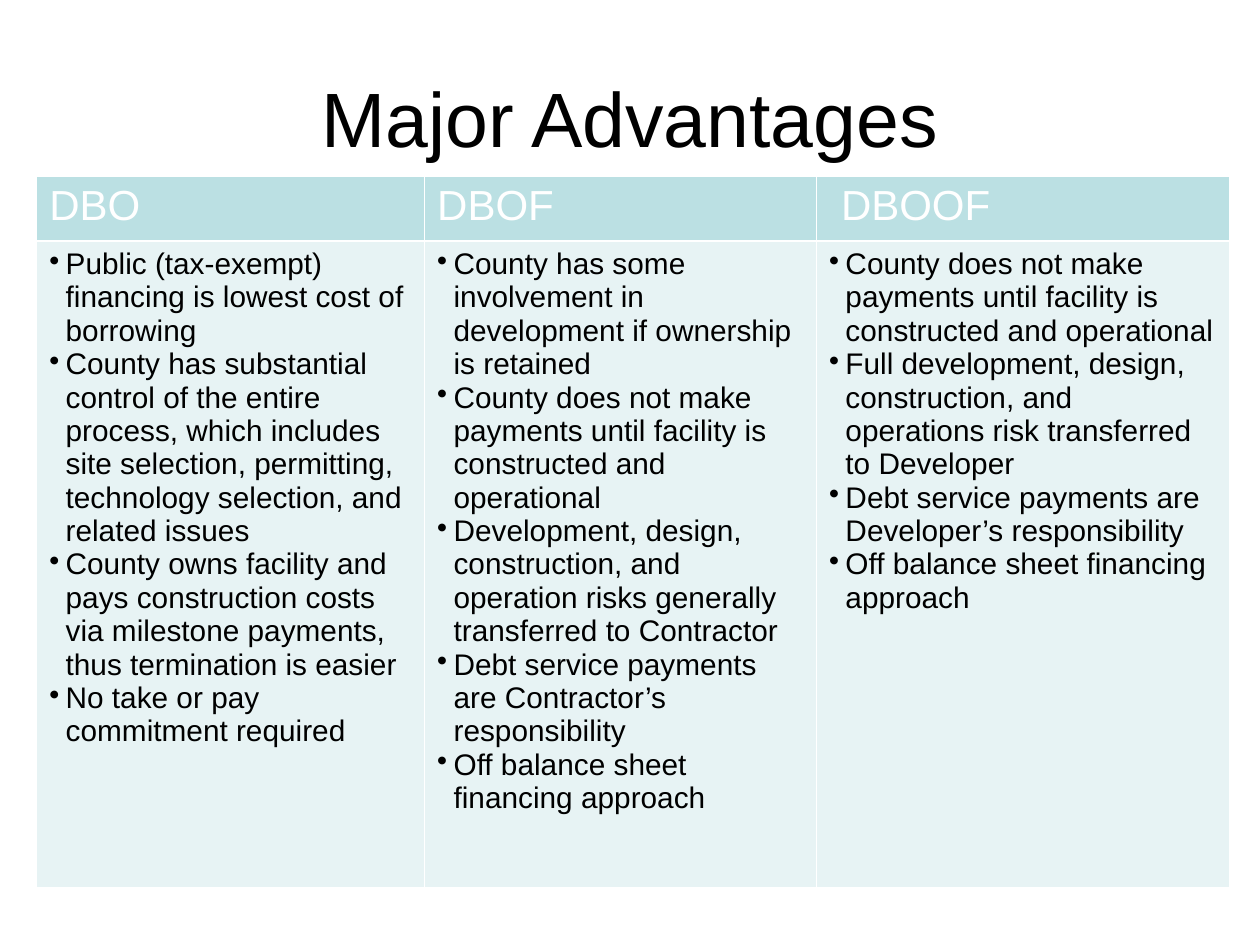
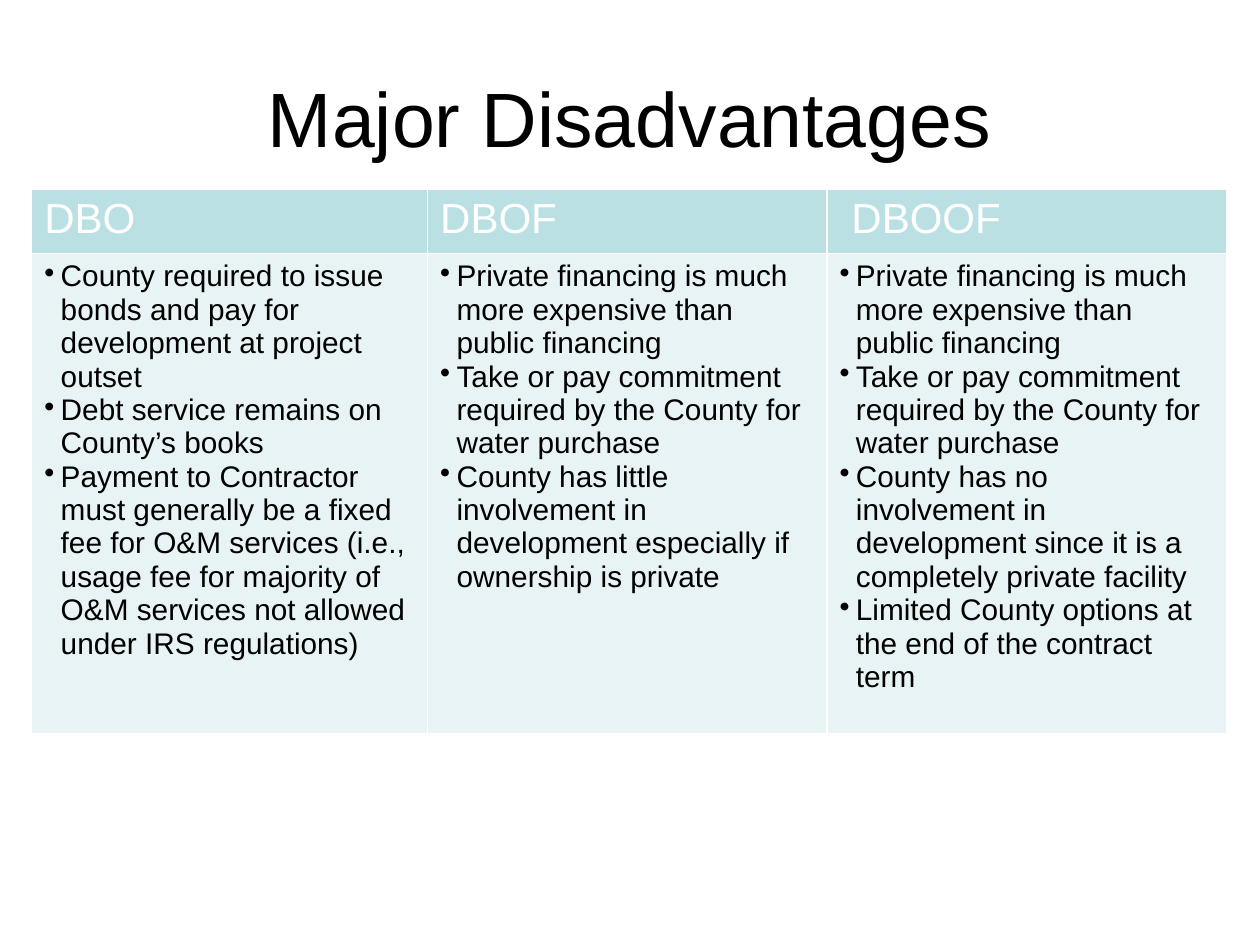
from dataclasses import dataclass

from lxml.etree import SubElement
from pptx import Presentation
from pptx.dml.color import RGBColor
from pptx.enum.text import MSO_ANCHOR, PP_ALIGN
from pptx.oxml import parse_xml
from pptx.oxml.ns import nsdecls, qn
from pptx.util import Cm, Pt


@dataclass(frozen=True)
class Theme:
    font: str = "Arial"
    ink: str = "000000"
    paper: str = "FFFFFF"
    head: str = "BBE0E3"
    body: str = "E7F3F4"
    title_size: int = 44
    head_size: int = 24
    body_size: int = 17
    rule: int = 1


HEADS = ["DBO", "DBOF", "DBOOF"]
HEAD_H = 1.3
HANG = 0.33
LAST_INSET = 0.24

GAINS = [
    [
        "Public (tax-exempt) financing is lowest cost of borrowing",
        "County has substantial control of the entire process, which includes site "
        "selection, permitting, technology selection, and related issues",
        "County owns facility and pays construction costs via milestone payments, "
        "thus termination is easier",
        "No take or pay commitment required",
    ],
    [
        "County has some involvement in development if ownership is retained",
        "County does not make payments until facility is constructed and operational",
        "Development, design, construction, and operation risks generally transferred "
        "to Contractor",
        "Debt service payments are Contractor’s responsibility",
        "Off balance sheet financing approach",
    ],
    [
        "County does not make payments until facility is constructed and operational",
        "Full development, design, construction, and operations risk transferred to "
        "Developer",
        "Debt service payments are Developer’s responsibility",
        "Off balance sheet financing approach",
    ],
]

PRIVATE = [
    "Private financing is much more expensive than public financing",
    "Take or pay commitment required by the County for water purchase",
]
LOSSES = [
    [
        "County required to issue bonds and pay for development at project outset",
        "Debt service remains on County’s books",
        "Payment to Contractor must generally be a fixed fee for O&M services (i.e., "
        "usage fee for majority of O&M services not allowed under IRS regulations)",
    ],
    PRIVATE + [
        "County has little involvement in development especially if ownership is private",
    ],
    PRIVATE + [
        "County has no involvement in development since it is a completely private "
        "facility",
        "Limited County options at the end of the contract term",
    ],
]


class Deck:
    def __init__(self, theme):
        self.theme = theme
        self.show = Presentation()
        self.show.slide_width, self.show.slide_height = Cm(25.4), Cm(19.05)
        self.slide = None

    def add(self):
        self.slide = self.show.slides.add_slide(self.show.slide_layouts[6])
        fill = self.slide.background.fill
        fill.solid()
        fill.fore_color.rgb = RGBColor.from_string(self.theme.paper)

    def put(self, frame, lines, size, color, align=PP_ALIGN.LEFT, inset=0, bullet=False):
        """Fill a text frame with one paragraph per line; inset is in cm."""
        frame.word_wrap = True
        for i, line in enumerate(lines):
            para = frame.paragraphs[0] if i == 0 else frame.add_paragraph()
            para.alignment = align
            props = para._p.get_or_add_pPr()
            props.set("marL", str(Cm(inset)))
            props.set("indent", str(-Cm(inset) if bullet else 0))
            if bullet:
                SubElement(props, qn("a:buChar")).set("char", "•")
            run = para.add_run()
            run.text = line
            run.font.name = self.theme.font
            run.font.size = Pt(size)
            run.font.bold = False
            run.font.color.rgb = RGBColor.from_string(color)

    def title(self, text):
        box = self.slide.shapes.add_textbox(Cm(1.27), Cm(0.76), Cm(22.86), Cm(3.18))
        box.text_frame.vertical_anchor = MSO_ANCHOR.MIDDLE
        self.put(box.text_frame, [text], self.theme.title_size, self.theme.ink,
                 align=PP_ALIGN.CENTER)

    def paint(self, cell, color):
        """Give a cell its fill and its four borders."""
        cell.fill.solid()
        cell.fill.fore_color.rgb = RGBColor.from_string(color)
        props = cell._tc.get_or_add_tcPr()
        for i, side in enumerate("LRTB"):
            props.insert(i, parse_xml(
                f'<a:ln{side} {nsdecls("a")} w="{Pt(self.theme.rule)}"><a:solidFill>'
                f'<a:srgbClr val="{self.theme.paper}"/></a:solidFill></a:ln{side}>'))

    def table(self, left, top, widths, height, lists):
        """Draw a header row above one bulleted list per column."""
        look = self.theme
        grid = self.slide.shapes.add_table(
            2, len(HEADS), Cm(left), Cm(top), Cm(sum(widths)), Cm(HEAD_H + height)).table
        grid.first_row = grid.horz_banding = False
        grid.rows[0].height, grid.rows[1].height = Cm(HEAD_H), Cm(height)
        for i, (width, head, items) in enumerate(zip(widths, HEADS, lists)):
            grid.columns[i].width = Cm(width)
            top_cell, low_cell = grid.cell(0, i), grid.cell(1, i)
            self.paint(top_cell, look.head)
            self.paint(low_cell, look.body)
            inset = LAST_INSET if head == HEADS[-1] else 0
            self.put(top_cell.text_frame, [head], look.head_size, look.paper, inset=inset)
            self.put(low_cell.text_frame, items, look.body_size, look.ink,
                     inset=HANG, bullet=True)


def main():
    deck = Deck(Theme())
    deck.add()
    deck.title("Major Advantages")
    deck.table(0.74, 3.56, [7.82, 7.9, 8.33], 13.03, GAINS)
    deck.add()
    deck.title("Major Disadvantages")
    deck.table(0.64, 3.81, [7.98, 8.05, 8.05], 9.68, LOSSES)
    deck.show.save("out.pptx")


if __name__ == "__main__":
    main()
